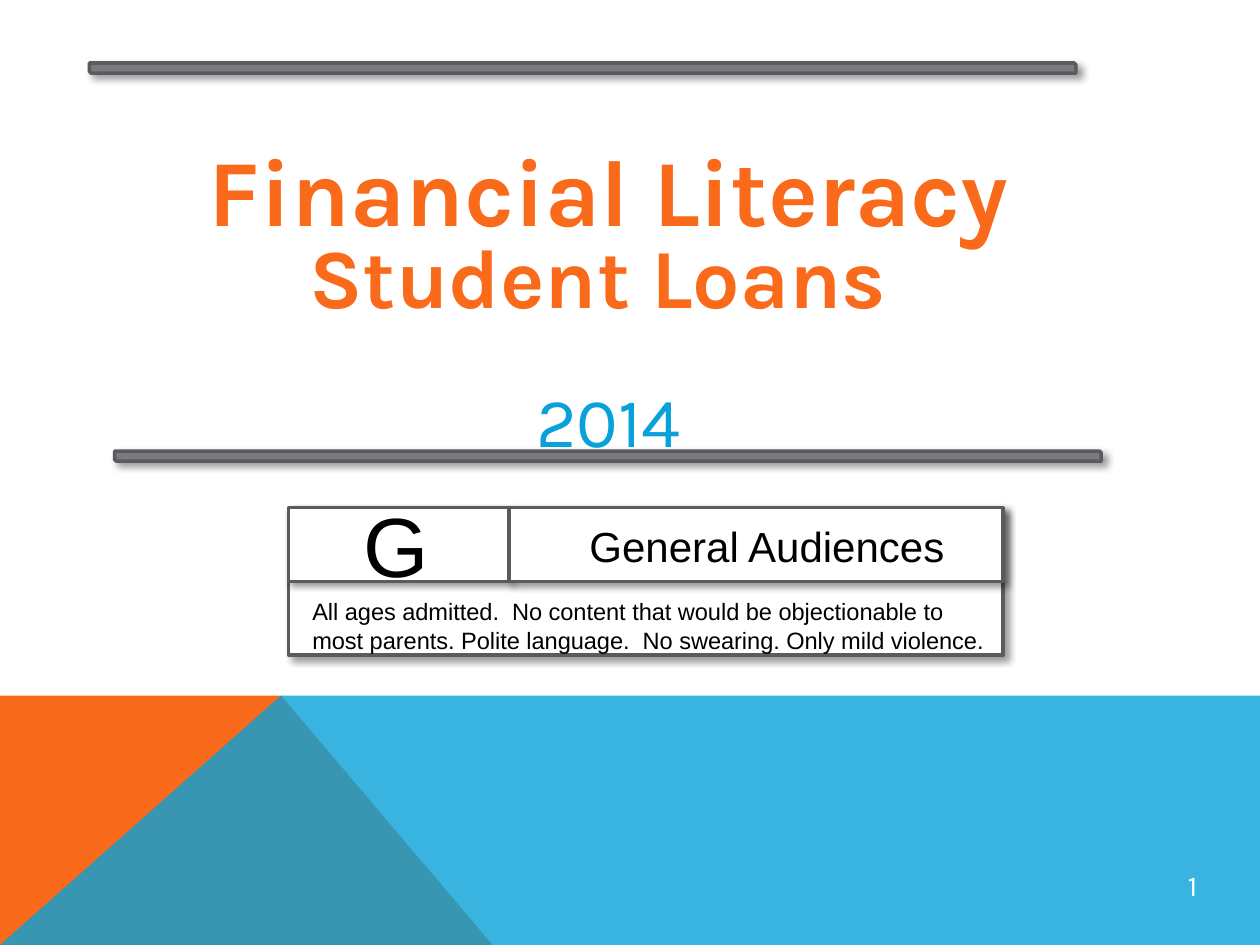
from lxml.etree import SubElement
from pptx import Presentation
from pptx.dml.color import RGBColor
from pptx.enum.shapes import MSO_SHAPE
from pptx.enum.text import MSO_ANCHOR, MSO_AUTO_SIZE, PP_ALIGN
from pptx.oxml import parse_xml
from pptx.oxml.ns import nsdecls, qn
from pptx.util import Inches, Pt

WIDE, HIGH = Inches(10), Inches(7.5)
ORANGE, BLUE, WHITE, BLACK = "F96A1B", "08A1D9", "FFFFFF", "000000"
GRAY, EDGE = "797B7E", "5A5B5D"


def color(code):
    """Turn a hex string into a colour."""
    return RGBColor.from_string(code)


def span(x, y, w, h):
    """Turn percent shares of the slide into left, top, width, height."""
    return [int(part * size / 100) for part, size in zip((x, y, w, h), (WIDE, HIGH) * 2)]


def style(para, size, face, code, bold=False):
    """Format every run of a paragraph."""
    for run in para.runs:
        run.font.size, run.font.name, run.font.bold = Pt(size), face, bold
        run.font.color.rgb = color(code)


def shade(shape):
    """Give a shape a soft shadow to its lower right."""
    shape._element.spPr.append(parse_xml(
        f'<a:effectLst {nsdecls("a")}><a:outerShdw blurRad="50800" dist="38100" '
        f'dir="2700000" algn="tl" rotWithShape="0"><a:srgbClr val="{BLACK}">'
        '<a:alpha val="40000"/></a:srgbClr></a:outerShdw></a:effectLst>'))


def panel(shapes, kind, area, fill):
    """Draw an edged shape with a shadow."""
    shape = shapes.add_shape(kind, *span(*area))
    shape.fill.solid()
    shape.fill.fore_color.rgb = color(fill)
    shape.line.color.rgb, shape.line.width = color(EDGE), Pt(2)
    shade(shape)


def wedge(shapes, points, code, alpha=100):
    """Draw a flat polygon through points given in percent."""
    spots = [tuple(span(x, y, 0, 0)[:2]) for x, y in points]
    build = shapes.build_freeform(*spots[0])
    build.add_line_segments(spots[1:], close=True)
    shape = build.convert_to_shape()
    shape.shadow.inherit = False
    shape.fill.solid()
    shape.fill.fore_color.rgb = color(code)
    shape.line.fill.background()
    if alpha < 100:
        tint = shape._element.spPr.find(qn("a:solidFill"))[0]
        SubElement(tint, qn("a:alpha")).set("val", str(alpha * 1000))


def label(shapes, area, text, size, wrap=False):
    """Add a plain black text box."""
    frame = shapes.add_textbox(*span(*area)).text_frame
    frame.word_wrap = wrap
    frame.text = text
    style(frame.paragraphs[0], size, "Arial", BLACK)


def head(title):
    """Place and format the title lines."""
    title.left, title.top, title.width, title.height = span(3.3, 7.73, 90, 33.33)
    frame = title.text_frame
    frame.text = "Financial Literacy\nStudent Loans \n2014"
    frame.word_wrap, frame.auto_size = True, MSO_AUTO_SIZE.NONE
    frame.vertical_anchor, frame.margin_top = MSO_ANCHOR.TOP, Inches(0.64)
    looks = (54, ORANGE, True), (48, ORANGE, True), (40, BLUE, False)
    for para, (size, code, bold) in zip(frame.paragraphs, looks):
        para.alignment, para.line_spacing = PP_ALIGN.CENTER, 0.8
        para.space_before = Pt(0 if bold else 39)
        style(para, size, "Karla", code, bold)


def number(shapes):
    """Add the page number in its clear disc."""
    disc = shapes.add_shape(MSO_SHAPE.OVAL, *span(91.9, 90, 5.5, 7.33))
    disc.shadow.inherit = False
    disc.fill.background()
    disc.line.fill.background()
    frame = disc.text_frame
    frame.margin_left = frame.margin_right = frame.margin_top = frame.margin_bottom = Inches(0.01)
    frame.vertical_anchor = MSO_ANCHOR.MIDDLE
    frame.text = "1"
    frame.paragraphs[0].alignment = PP_ALIGN.CENTER
    style(frame.paragraphs[0], 16.5, "Karla", WHITE)


def rating(shapes):
    """Build the grouped rating card."""
    left, top, wide, row, cut = 22.9, 53.73, 56.7, 7.8, 17.5
    card = shapes.add_group_shape().shapes
    for area in ((left, top, wide, 2 * row), (left, top, cut, row),
                 (left + cut, top, wide - cut, row)):
        panel(card, MSO_SHAPE.RECTANGLE, area, WHITE)
    label(card, (27.9, 51.6, 8, 12.13), "G", 48)
    label(card, (45.8, 54.4, 30.5, 6.67), "General Audiences", 24)
    label(card, (23.8, 62.53, 55.8, 7.47),
          "All ages admitted.  No content that would be objectionable to most parents. "
          "Polite language.  No swearing. Only mild violence.", 13.5, True)


def main():
    """Build and save the slide."""
    deck = Presentation()
    deck.slide_width, deck.slide_height = WIDE, HIGH
    slide = deck.slides.add_slide(deck.slide_layouts[5])
    shapes = slide.shapes
    peak = (22.3, 73.6)
    wedge(shapes, [(0, 100), (0, 73.6), peak, (39.1, 100)], ORANGE)
    wedge(shapes, [(0, 100), peak, (100, 73.6), (100, 100)], BLUE, 80)
    number(shapes)
    head(shapes.title)
    for x, y in ((7.1, 6.67), (9.1, 47.73)):
        panel(shapes, MSO_SHAPE.SNIP_2_DIAG_RECTANGLE, (x, y, 78.3, 1.07), GRAY)
    rating(shapes)
    deck.save("out.pptx")


if __name__ == "__main__":
    main()
